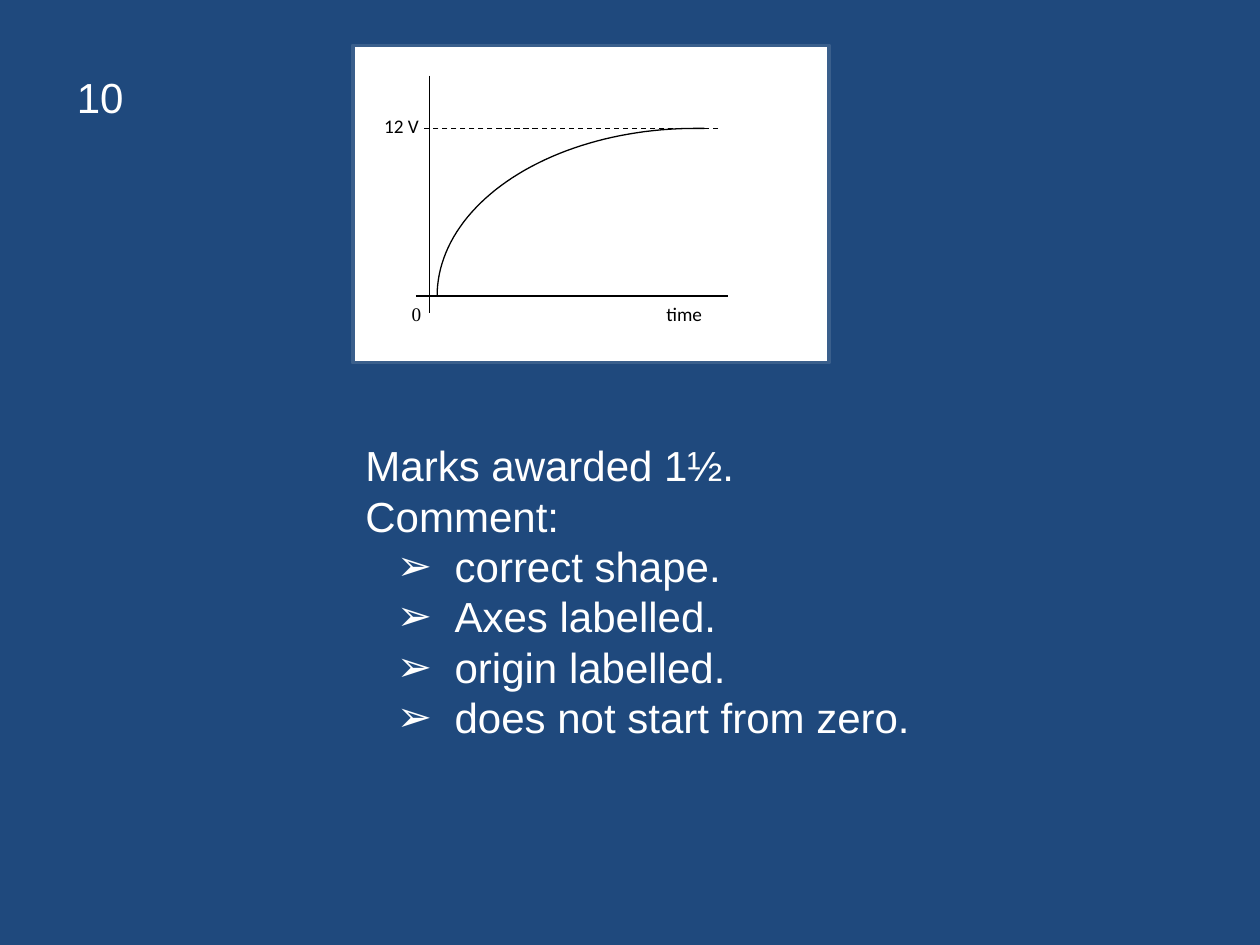
import math

import lxml.etree
import pptx
import pptx.dml.color
import pptx.enum.dml
import pptx.enum.shapes
import pptx.enum.text
import pptx.oxml.ns
import pptx.util

Pt = pptx.util.Pt

# Content
NUMBER = "10"
COMMENTS = [
    ("Marks awarded 1½.", False),
    ("Comment:", False),
    ("correct shape.", True),
    ("Axes labelled.", True),
    ("origin labelled.", True),
    ("does not start from zero.", True),
]

# Positions in points
NUMBER_BOX = (36.7, 37.4, 41.8, 36)
COMMENT_BOX = (201.6, 247.7, 518.4, 181.4)
CARD_BOX = (201.6, 25.9, 272.2, 181.4)
ORIGIN_X, BASE_Y, SUPPLY_Y = 245.5, 169.2, 73.4
GRAPH_LINES = [  # x1, y1, x2, y2, dashed
    (ORIGIN_X, 43.2, ORIGIN_X, 178.6, False),
    (237.6, BASE_Y, 416.2, BASE_Y, False),
    (410.4, SUPPLY_Y, 241.9, SUPPLY_Y, True),
]
GRAPH_LABELS = [  # text, font, left, top, width
    ("0", "Times New Roman", 228.2, BASE_Y, 19.4),
    ("12 V", "Calibri", 212.4, 61.9, 39.6),
    ("time", "Calibri", 373.7, BASE_Y, 54.7),
]
LABEL_HEIGHT = 23.8
CURVE_START, CURVE_FLAT, CURVE_END = 249.8, 397.4, 402.5
CURVE_STEPS = 48

WHITE, BLACK, NAVY, CARD_EDGE = "FFFFFF", "000000", "1F497D", "3A5F8C"


def colour(value):
    return pptx.dml.color.RGBColor.from_string(value)


def place(shape, box):
    shape.left, shape.top, shape.width, shape.height = map(Pt, box)


def add_run(paragraph, text, font, size, fill):
    run = paragraph.add_run()
    run.text = text
    run.font.name = font
    run.font.size = Pt(size)
    run.font.color.rgb = colour(fill)


def set_line(shape, fill, width):
    shape.line.color.rgb = colour(fill)
    shape.line.width = Pt(width)


def prepare_frame(shape, box, wrap):
    place(shape, box)
    frame = shape.text_frame
    frame.word_wrap = wrap
    frame.auto_size = pptx.enum.text.MSO_AUTO_SIZE.SHAPE_TO_FIT_TEXT
    frame.vertical_anchor = pptx.enum.text.MSO_ANCHOR.TOP
    return frame


def format_paragraph(paragraph, text, bulleted=False):
    paragraph.alignment = pptx.enum.text.PP_ALIGN.LEFT
    paragraph.line_spacing = Pt(28.8)
    paragraph.space_before = Pt(0)
    paragraph.level = int(bulleted)
    properties = paragraph._p.get_or_add_pPr()
    properties.set("marL", str(Pt(51 if bulleted else 0)))
    properties.set("indent", str(Pt(-33 if bulleted else 0)))
    tag = "a:buChar" if bulleted else "a:buNone"
    bullet = lxml.etree.SubElement(properties, pptx.oxml.ns.qn(tag))
    if bulleted:
        bullet.set("char", "➢")
    add_run(paragraph, text, "Arial", 24, WHITE)


def add_graph_line(shapes, x1, y1, x2, y2, dashed):
    line = shapes.add_connector(
        pptx.enum.shapes.MSO_CONNECTOR.STRAIGHT, Pt(x1), Pt(y1), Pt(x2), Pt(y2))
    set_line(line, BLACK, 0.75)
    if dashed:
        line.line.dash_style = pptx.enum.dml.MSO_LINE.DASH
    lxml.etree.SubElement(line._element.spPr, pptx.oxml.ns.qn("a:effectLst"))


def add_graph_label(shapes, text, font, left, top, width):
    box = shapes.add_textbox(Pt(left), Pt(top), Pt(width), Pt(LABEL_HEIGHT))
    box.text_frame.word_wrap = True
    paragraph = box.text_frame.paragraphs[0]
    paragraph.space_after = Pt(10)
    add_run(paragraph, text, font, 11, BLACK)


def add_charging_curve(shapes):
    # A quarter ellipse rising to the supply voltage, then a short flat end
    points = []
    for step in range(CURVE_STEPS + 1):
        angle = math.pi / 2 * step / CURVE_STEPS
        x = CURVE_FLAT - (CURVE_FLAT - CURVE_START) * math.cos(angle)
        y = BASE_Y - (BASE_Y - SUPPLY_Y) * math.sin(angle)
        points.append((Pt(x), Pt(y)))
    points.append((Pt(CURVE_END), Pt(SUPPLY_Y)))
    builder = shapes.build_freeform(*points[0])
    builder.add_line_segments(points[1:], close=False)
    curve = builder.convert_to_shape()
    curve.shadow.inherit = False
    curve.fill.background()
    set_line(curve, BLACK, 0.75)


def main():
    presentation = pptx.Presentation()
    presentation.slide_width, presentation.slide_height = Pt(720), Pt(540)
    slide = presentation.slides.add_slide(presentation.slide_layouts[1])
    slide.background.fill.solid()
    slide.background.fill.fore_color.rgb = colour(NAVY)

    # Question number
    frame = prepare_frame(slide.shapes.title, NUMBER_BOX, False)
    format_paragraph(frame.paragraphs[0], NUMBER)

    # Marks and comments
    frame = prepare_frame(slide.placeholders[1], COMMENT_BOX, True)
    for index, (text, bulleted) in enumerate(COMMENTS):
        paragraph = frame.add_paragraph() if index else frame.paragraphs[0]
        format_paragraph(paragraph, text, bulleted)

    # White card behind the graph
    card = slide.shapes.add_shape(
        pptx.enum.shapes.MSO_SHAPE.RECTANGLE, *map(Pt, CARD_BOX))
    card.shadow.inherit = False
    card.fill.solid()
    card.fill.fore_color.rgb = colour(WHITE)
    set_line(card, CARD_EDGE, 2)

    # Voltage against time graph
    graph = slide.shapes.add_group_shape()
    for line in GRAPH_LINES:
        add_graph_line(graph.shapes, *line)
    for label in GRAPH_LABELS:
        add_graph_label(graph.shapes, *label)
    add_charging_curve(graph.shapes)

    presentation.save("out.pptx")


if __name__ == "__main__":
    main()
